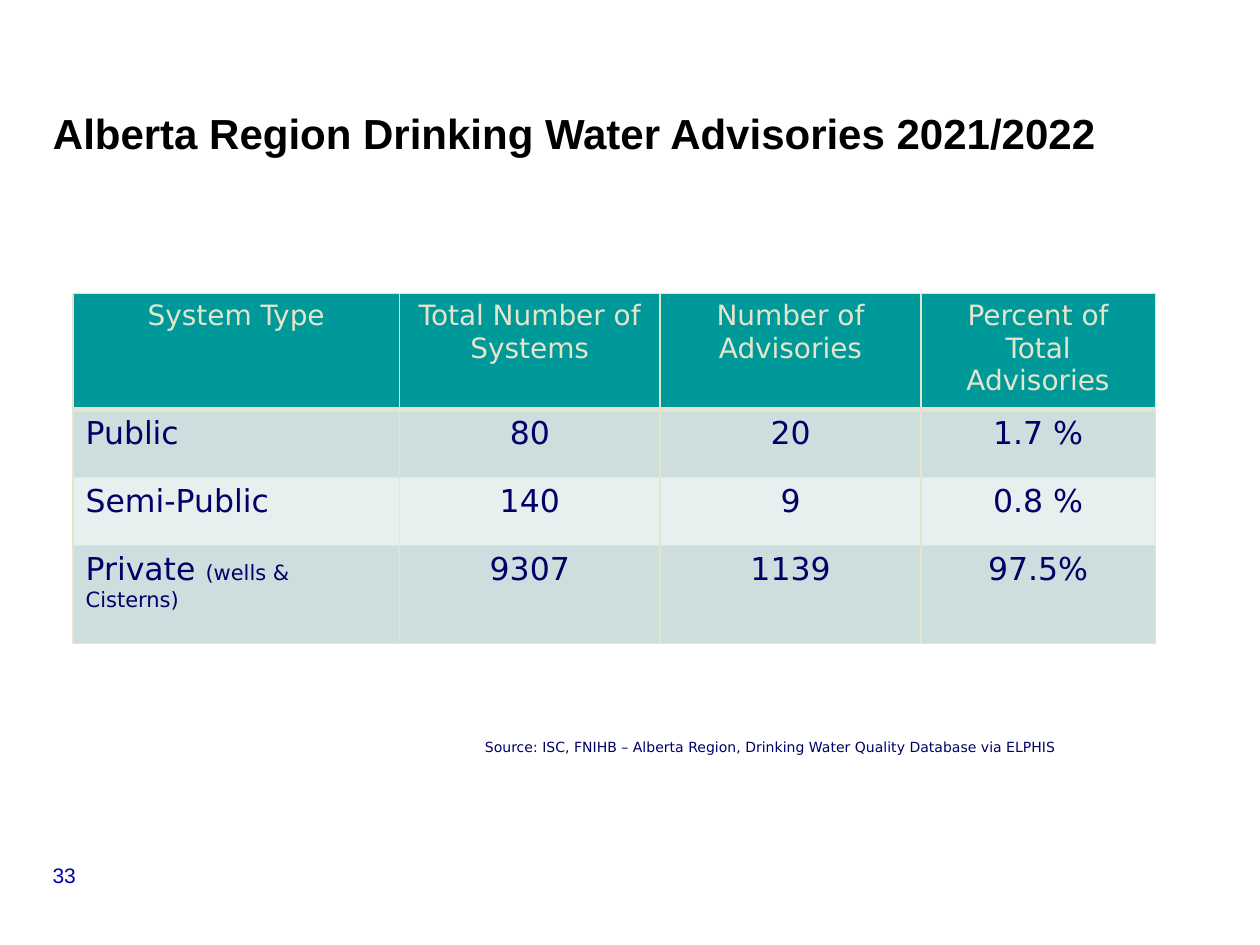
from lxml import etree
from pptx import Presentation
from pptx import util as u
from pptx.dml.color import RGBColor
from pptx.enum import text
from pptx.oxml import ns

BLACK = RGBColor(0x00, 0x00, 0x00)
BLUE = RGBColor(0x00, 0x00, 0xA3)
NAVY = RGBColor(0x00, 0x00, 0x66)
TEAL = RGBColor(0x00, 0x99, 0x99)
CREAM = RGBColor(0xE5, 0xE5, 0xCC)
BAND = RGBColor(0xCC, 0xDE, 0xDE)
PALE = RGBColor(0xE7, 0xEF, 0xEF)

SANS = "DejaVu Sans"
COLS = (2.59, 2.07, 2.07, 1.86)
ROWS = (0.92, 0.54, 0.54, 0.78)
DATA = (
    ("System Type", "Total Number of Systems", "Number of Advisories", "Percent of Total Advisories"),
    ("Public", "80", "20", "1.7 %"),
    ("Semi-Public", "140", "9", "0.8 %"),
    ("Private |(wells & Cisterns)", "9307", "1139", "97.5%"),
)


def set_font(font, size, color, name=SANS, bold=False):
    """Set the size, colour, typeface and weight of a font."""
    font.size, font.name, font.bold = u.Pt(size), name, bold
    font.color.rgb = color


def add_text(s, box, words, size, color, name, bold=False, margin=None,
             align=text.PP_ALIGN.LEFT, spacing=0.9):
    """Add a one-paragraph text box at box, given in inches."""
    tf = s.shapes.add_textbox(*map(u.Inches, box)).text_frame
    tf.word_wrap = True
    if margin is not None:
        tf.margin_left = tf.margin_top = tf.margin_right = tf.margin_bottom = margin
    p = tf.paragraphs[0]
    p.text, p.alignment, p.line_spacing = words, align, spacing
    set_font(p.font, size, color, name, bold)


def set_borders(cell, bottom=1):
    """Draw cream lines on the four sides of a cell."""
    tc_pr = cell._tc.get_or_add_tcPr()
    for i, (side, width) in enumerate((("L", 1), ("R", 1), ("T", 1), ("B", bottom))):
        ln = etree.Element(ns.qn(f"a:ln{side}"), w=str(u.Pt(width)))
        fill = etree.SubElement(ln, ns.qn("a:solidFill"))
        etree.SubElement(fill, ns.qn("a:srgbClr"), val=str(CREAM))
        tc_pr.insert(i, ln)


def fill_cell(cell, words, row, col):
    """Write and style one cell; text after a bar is set smaller."""
    header = row == 0
    cell.fill.solid()
    cell.fill.fore_color.rgb = TEAL if header else BAND if row % 2 else PALE
    set_borders(cell, 3 if header else 1)
    p = cell.text_frame.paragraphs[0]
    p.alignment = text.PP_ALIGN.CENTER if header or col else text.PP_ALIGN.LEFT
    size, color = (16, CREAM) if header else (18, NAVY)
    for part, points in zip(words.split("|"), (size, 12)):
        r = p.add_run()
        r.text = part
        set_font(r.font, points, color)


def add_advisories(s, left, top):
    """Add the advisories table."""
    frame = s.shapes.add_table(len(ROWS), len(COLS), u.Inches(left), u.Inches(top),
                               u.Inches(sum(COLS)), u.Inches(sum(ROWS)))
    table = frame.table
    for column, width in zip(table.columns, COLS):
        column.width = u.Inches(width)
    for i, (height, values) in enumerate(zip(ROWS, DATA)):
        table.rows[i].height = u.Inches(height)
        for j, words in enumerate(values):
            fill_cell(table.cell(i, j), words, i, j)


def main():
    """Build and save the slide."""
    prs = Presentation()
    prs.slide_width, prs.slide_height = u.Inches(10), u.Inches(7.5)
    s = prs.slides.add_slide(prs.slide_layouts[6])
    add_text(s, (0.04, 6.82, 0.94, 0.3), "33", 12, BLUE, "Arial",
             align=text.PP_ALIGN.CENTER)
    add_text(s, (0.42, 0.92, 8.58, 0.33), "Alberta Region Drinking Water Advisories 2021/2022",
             24, BLACK, "Arial", bold=True, margin=0, spacing=u.Pt(24))
    add_advisories(s, 0.58, 2.33)
    add_text(s, (3.75, 5.83, 5.42, 0.22),
             "Source: ISC, FNIHB – Alberta Region, Drinking Water Quality Database via ELPHIS",
             8, NAVY, SANS)
    prs.save("out.pptx")


if __name__ == "__main__":
    main()
